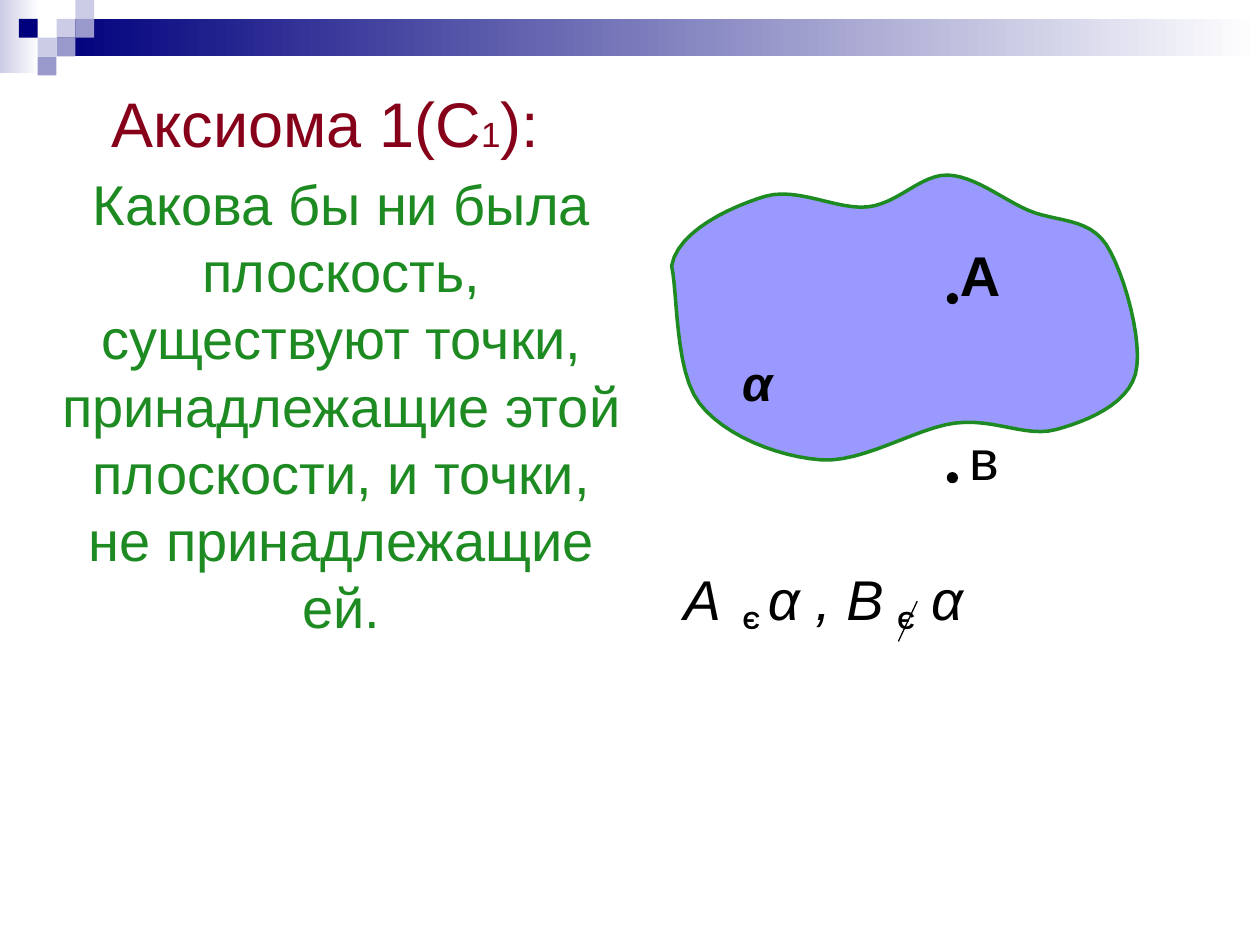
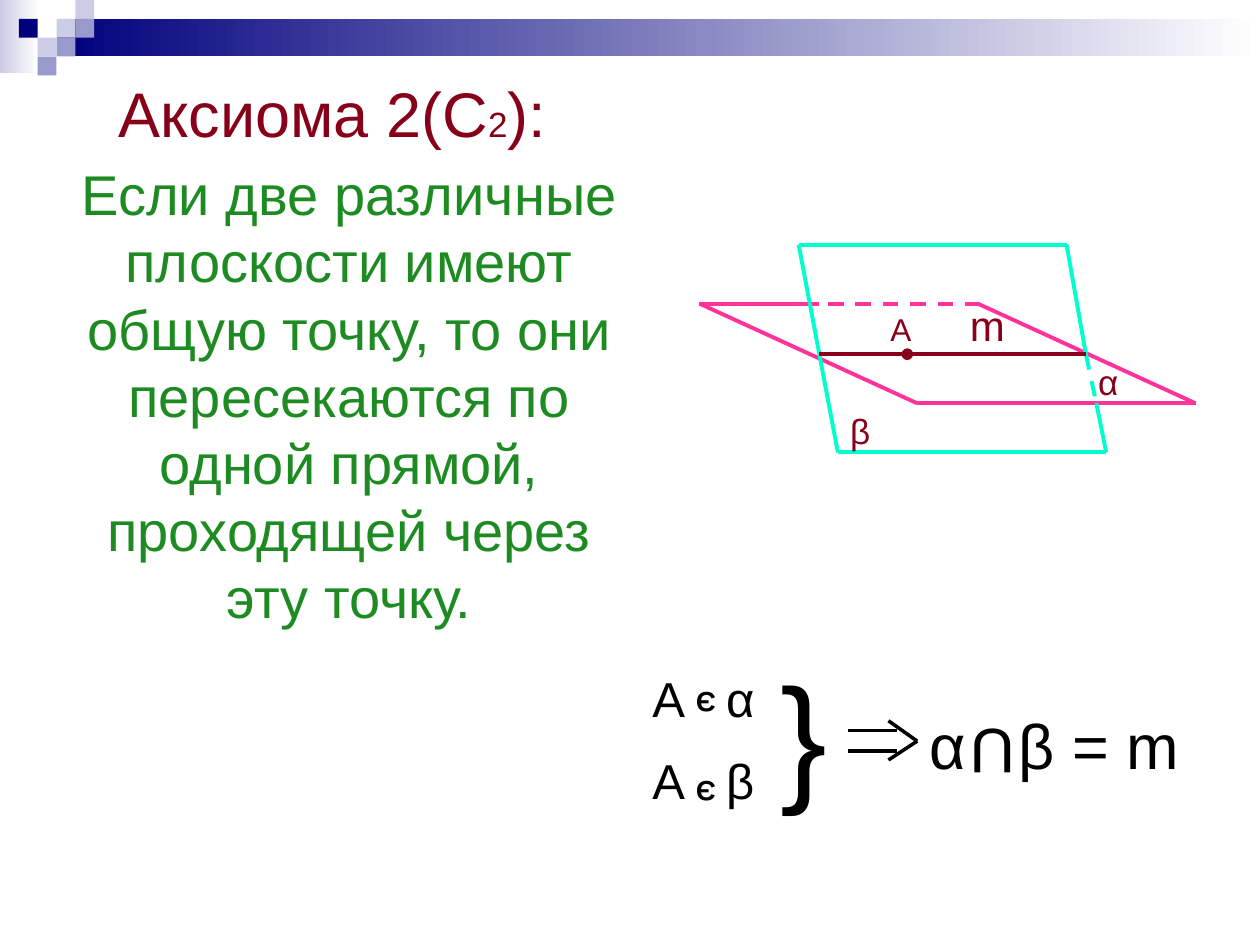
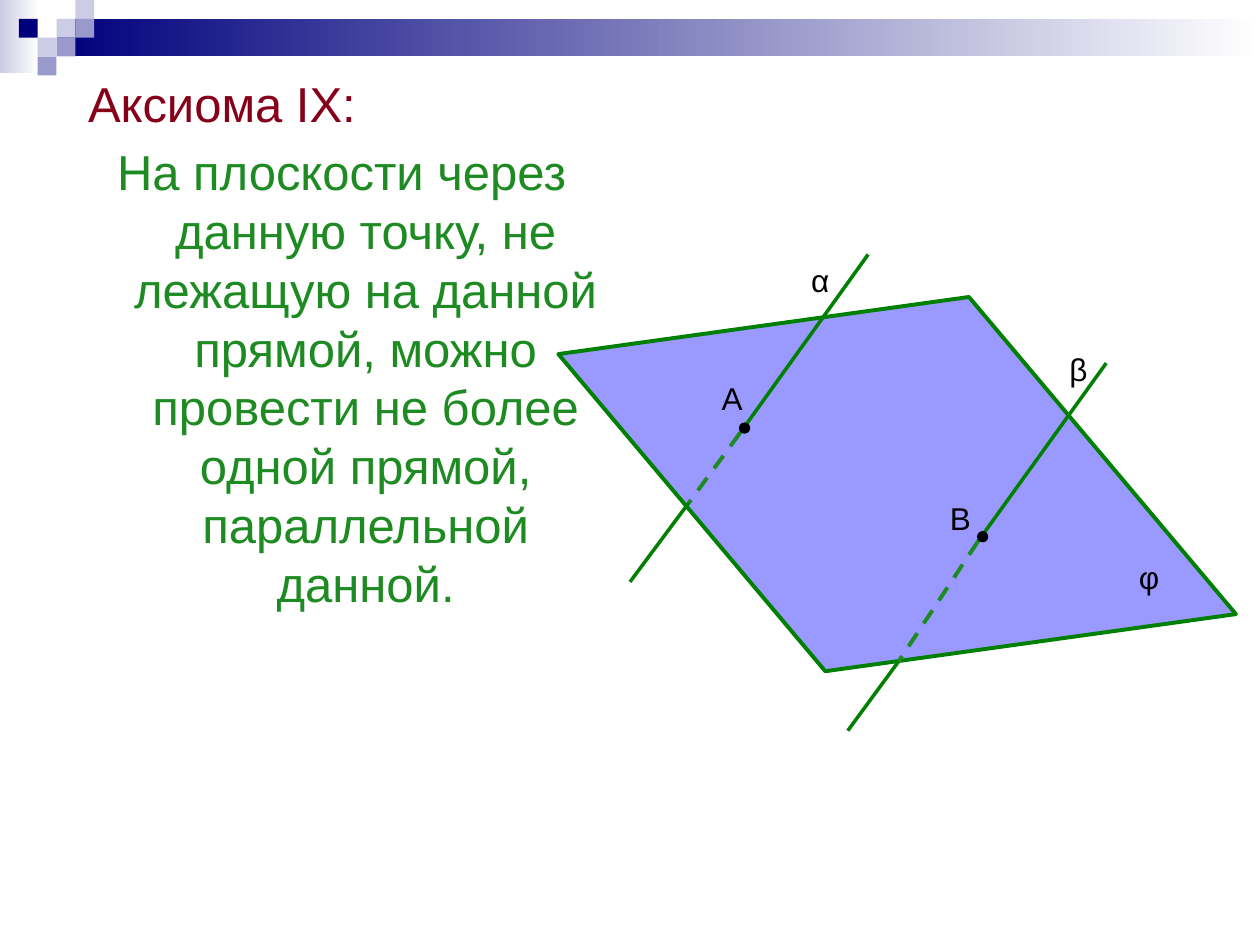
"""Build three slides on the axioms of solid geometry."""
from dataclasses import dataclass

from lxml.etree import SubElement
from pptx import Presentation
from pptx.dml.color import RGBColor
from pptx.enum.dml import MSO_LINE
from pptx.enum.shapes import MSO_CONNECTOR, MSO_SHAPE
from pptx.enum.text import MSO_ANCHOR, MSO_AUTO_SIZE, PP_ALIGN
from pptx.oxml.ns import qn
from pptx.util import Cm, Pt


@dataclass(frozen=True)
class Theme:
    font: str = "Arial"
    leading: float = 1.2
    white: str = "FFFFFF"
    ink: str = "000000"
    navy: str = "00007D"
    lilac: str = "CCCCE6"
    violet: str = "9999CC"
    plane: str = "9999FF"
    wine: str = "86001A"
    leaf: str = "1D8B22"
    green: str = "008000"
    pink: str = "FF3399"
    mint: str = "00FFCC"
    subscript: int = 20
    mark: int = 18
    small: int = 20
    medium: int = 28
    large: int = 32
    heading: int = 36
    brace: int = 80
    hanging: float = 0.97
    dot: float = 0.2


T = Theme()

CELL = 0.38
BAND_BARS = [((0, 0, 0.79, 1.47), T.lilac), ((1.14, CELL, 24.26, 2 * CELL), T.navy)]
BAND_CELLS = [
    (3, 1, T.lilac), (4, 0, T.lilac), (4, 1, T.violet), (2, 2, T.lilac),
    (1, 1, T.navy), (3, 2, T.violet), (2, 3, T.violet),
]

BOLD = {"bold": True}
TURNED = {"bold": True, "rotation": 180, "width": 0.99}
ITALIC = {"italic": True, "width": 4}
WINE = {"color": T.wine}

WAVY_PLANE = [
    (14.66, 8.23), (13.54, 5.36), (15.42, 3.96), (17.5, 4.17), (19.1, 3.53),
    (20.73, 4.24), (22.3, 4.93), (22.89, 7.54), (21.29, 8.66), (19.25, 8.53),
    (16.54, 9.27), (14.1, 8.13), (13.54, 5.36), (13.34, 4.78),
]

AXIOMS = [
    {
        "title": [("Аксиома 1(С", T.heading), ("1", T.subscript), ("):", T.heading)],
        "title_box": (0.56, 1.58, 12, 1.7),
        "title_align": PP_ALIGN.CENTER,
        "body": "Какова бы ни была плоскость, существуют точки, принадлежащие "
                "этой плоскости, и точки, не принадлежащие ей.",
        "body_box": (0, 3.29, 12.8, 13),
        "body_size": T.large,
        "wavy_plane": WAVY_PLANE,
        "strokes": [([(18.49, 12.12), (18.11, 12.93)], T.ink, 0.75, None)],
        "dots": [(19.1, 5.92), (19.1, 9.53)],
        "labels": [
            ("α", 14.71, 6.99, T.medium, {"bold": True, "italic": True}),
            ("Α", 19.1, 4.72, T.large, BOLD),
            ("в", 19.3, 8.43, T.large, {}),
            ("А", 13.53, 11.26, T.large, ITALIC),
            ("α , В", 15.23, 11.26, T.large, ITALIC),
            ("α", 18.52, 11.26, T.large, ITALIC),
            ("Э", 14.58, 12.12, 14, TURNED),
            ("Э", 17.7, 12.12, 14, TURNED),
        ],
    },
    {
        "title": [("Аксиома 2(С", T.heading), ("2", T.subscript), ("):", T.heading)],
        "title_box": (0.7, 1.38, 12, 1.7),
        "title_align": PP_ALIGN.CENTER,
        "body": "Если две различные плоскости имеют общую точку, то они "
                "пересекаются по одной прямой, проходящей через эту точку.",
        "body_box": (0, 3.09, 13.11, 13),
        "body_size": T.large,
        "strokes": [
            ([(16.51, 6.12), (14.1, 6.12), (18.49, 8.13), (24.1, 8.13), (19.71, 6.12)],
             T.pink, 2.25, None),
            ([(16.69, 6.12), (19.71, 6.12)], T.pink, 2.25, "dash"),
            ([(21.89, 7.14), (21.5, 4.93), (16.1, 4.93), (16.89, 9.12), (22.3, 9.12),
              (22.1, 8.13)], T.mint, 2.25, None),
            ([(21.89, 7.14), (22.1, 8.13)], T.mint, 2.25, "dash"),
            ([(16.51, 7.14), (18.29, 7.14)], T.wine, 2.25, "oval"),
            ([(18.29, 7.14), (21.89, 7.14)], T.wine, 2.25, None),
            ([(17.09, 14.73), (18.08, 14.73)], T.ink, 2, None),
            ([(17.09, 15.14), (18.08, 15.14)], T.ink, 2, None),
            ([(17.91, 14.53), (18.49, 14.94), (17.91, 15.32)], T.ink, 2, None),
        ],
        "labels": [
            ("β", 16.89, 8.13, T.small, WINE),
            ("α", 21.89, 7.14, T.small, WINE),
            ("m", 19.3, 5.92, 24, WINE),
            ("А", 17.7, 6.12, T.mark, WINE),
            ("А", 12.9, 13.35, T.medium, {}),
            ("α", 14.39, 13.35, T.medium, {}),
            ("А", 12.9, 15, T.medium, {}),
            ("β", 14.39, 15, T.medium, {}),
            ("Э", 13.69, 13.72, 16, TURNED),
            ("Э", 13.69, 15.52, 16, TURNED),
            ("}", 15.49, 12.93, T.brace, {"width": 1.8}),
            ("α", 18.49, 14.12, T.heading, {}),
            ("U", 19.2, 14.33, T.heading, {"rotation": 180, "width": 1.53}),
            ("β = m", 20.28, 14.12, T.heading, {"width": 4.5}),
        ],
    },
    {
        "title": [("Аксиома IX:", T.medium)],
        "title_box": (1.52, 1.36, 10, 1.4),
        "title_align": PP_ALIGN.LEFT,
        "body": "На плоскости через данную точку, не лежащую на данной прямой, "
                "можно провести не более одной прямой, параллельной данной.",
        "body_box": (1.27, 2.73, 11.23, 13),
        "body_size": T.medium,
        "body_indent": -T.hanging,
        "diamond_plane": (10.77, 5.72, 14.63, 8.08),
        "strokes": [
            ([(14.91, 8.74), (17.5, 5.13)], T.green, 2, None),
            ([(14.91, 8.74), (13.89, 10.13)], T.leaf, 2.25, "dash"),
            ([(13.89, 10.13), (12.7, 11.73)], T.green, 2, None),
            ([(19.71, 10.92), (22.3, 7.32)], T.green, 2, None),
            ([(19.71, 10.92), (18.11, 13.34)], T.leaf, 2.25, "dash"),
            ([(18.11, 13.34), (17.09, 14.73)], T.green, 2, None),
        ],
        "dots": [(14.91, 8.53), (19.71, 10.72)],
        "labels": [
            ("А", 14.3, 7.52, T.mark, {}),
            ("α", 16.1, 5.13, T.mark, {}),
            ("β", 21.31, 6.93, T.mark, {}),
            ("φ", 22.71, 11.13, T.mark, {}),
            ("B", 18.9, 9.93, T.mark, {}),
        ],
    },
]


def rgb(color):
    return RGBColor.from_string(color)


def write(frame, runs, color=T.ink, align=PP_ALIGN.LEFT, bold=False, italic=False,
          left=0, indent=0):
    frame.word_wrap = True
    frame.auto_size = MSO_AUTO_SIZE.NONE
    frame.vertical_anchor = MSO_ANCHOR.TOP
    paragraph = frame.paragraphs[0]
    paragraph.alignment = align
    paragraph.space_before = Pt(0)
    paragraph.line_spacing = Pt(runs[0][1] * T.leading)
    for words, size in runs:
        run = paragraph.add_run()
        run.text = words
        font = run.font
        font.name, font.size, font.bold, font.italic = T.font, Pt(size), bold, italic
        font.color.rgb = rgb(color)
    properties = paragraph._p.get_or_add_pPr()
    properties.set("marL", str(Cm(left)))
    properties.set("indent", str(Cm(indent)))
    SubElement(properties, qn("a:buNone"))


def place(holder, box):
    holder.left, holder.top, holder.width, holder.height = map(Cm, box)


def paint(shape, fill, line=None, weight=0.75):
    shape.shadow.inherit = False
    shape.fill.solid()
    shape.fill.fore_color.rgb = rgb(fill)
    if line:
        shape.line.color.rgb = rgb(line)
        shape.line.width = Pt(weight)
    else:
        shape.line.fill.background()


def add_band(slide):
    for box, start in BAND_BARS:
        bar = slide.shapes.add_shape(MSO_SHAPE.RECTANGLE, *map(Cm, box))
        paint(bar, start)
        bar.fill.gradient()
        bar.fill.gradient_angle = 0
        for stop, color in zip(bar.fill.gradient_stops, (start, T.white)):
            stop.color.rgb = rgb(color)
    for column, row, color in BAND_CELLS:
        box = (column * CELL, row * CELL, CELL, CELL)
        paint(slide.shapes.add_shape(MSO_SHAPE.RECTANGLE, *map(Cm, box)), color)


def smooth(points, steps=12):
    """Return a Catmull-Rom curve; the first and last points only steer its ends."""
    def blend(a, b, c, d, t):
        return b + (c - a) * t / 2 + (2 * a - 5 * b + 4 * c - d) * t**2 / 2 \
            + (3 * b - a - 3 * c + d) * t**3 / 2

    spans = zip(points, points[1:], points[2:], points[3:])
    return [tuple(Cm(blend(*axis, step / steps)) for axis in zip(*span))
            for span in spans for step in range(steps)]


def add_wavy_plane(slide, points):
    start, *rest = smooth(points)
    builder = slide.shapes.build_freeform(*start)
    builder.add_line_segments(rest, close=True)
    paint(builder.convert_to_shape(), T.plane, T.leaf, 2)


def add_diamond_plane(slide, box):
    diamond = slide.shapes.add_shape(MSO_SHAPE.DIAMOND, *map(Cm, box))
    diamond.rotation = 21
    paint(diamond, T.plane, T.green, 2.25)


def add_stroke(slide, points, color, weight, style):
    for start, end in zip(points, points[1:]):
        stroke = slide.shapes.add_connector(MSO_CONNECTOR.STRAIGHT, *map(Cm, start + end))
        stroke.line.color.rgb = rgb(color)
        stroke.line.width = Pt(weight)
        if style == "dash":
            stroke.line.dash_style = MSO_LINE.DASH
        elif style == "oval":
            SubElement(stroke.line._get_or_add_ln(), qn("a:tailEnd"), type="oval")
        SubElement(stroke._element.spPr, qn("a:effectLst"))


def add_label(slide, words, left, top, size, width=1.5, rotation=0, **style):
    height = Pt(size * T.leading) + Cm(0.25)
    label = slide.shapes.add_textbox(Cm(left), Cm(top), Cm(width), height)
    label.rotation = rotation
    write(label.text_frame, [(words, size)], **style)


def add_axiom(deck, axiom):
    slide = deck.slides.add_slide(deck.slide_layouts[1])
    add_band(slide)
    title, body = slide.placeholders
    place(title, axiom["title_box"])
    write(title.text_frame, axiom["title"], color=T.wine, align=axiom["title_align"])
    place(body, axiom["body_box"])
    write(body.text_frame, [(axiom["body"], axiom["body_size"])], color=T.leaf,
          align=PP_ALIGN.CENTER, left=T.hanging, indent=axiom.get("body_indent", 0))
    if "wavy_plane" in axiom:
        add_wavy_plane(slide, axiom["wavy_plane"])
    if "diamond_plane" in axiom:
        add_diamond_plane(slide, axiom["diamond_plane"])
    for stroke in axiom["strokes"]:
        add_stroke(slide, *stroke)
    for left, top in axiom.get("dots", []):
        box = (left, top, T.dot, T.dot)
        paint(slide.shapes.add_shape(MSO_SHAPE.OVAL, *map(Cm, box)), T.ink, T.ink)
    for words, left, top, size, style in axiom["labels"]:
        add_label(slide, words, left, top, size, **style)


def main():
    deck = Presentation()
    deck.slide_width, deck.slide_height = Cm(25.4), Cm(19.05)
    for axiom in AXIOMS:
        add_axiom(deck, axiom)
    deck.save("out.pptx")


if __name__ == "__main__":
    main()
